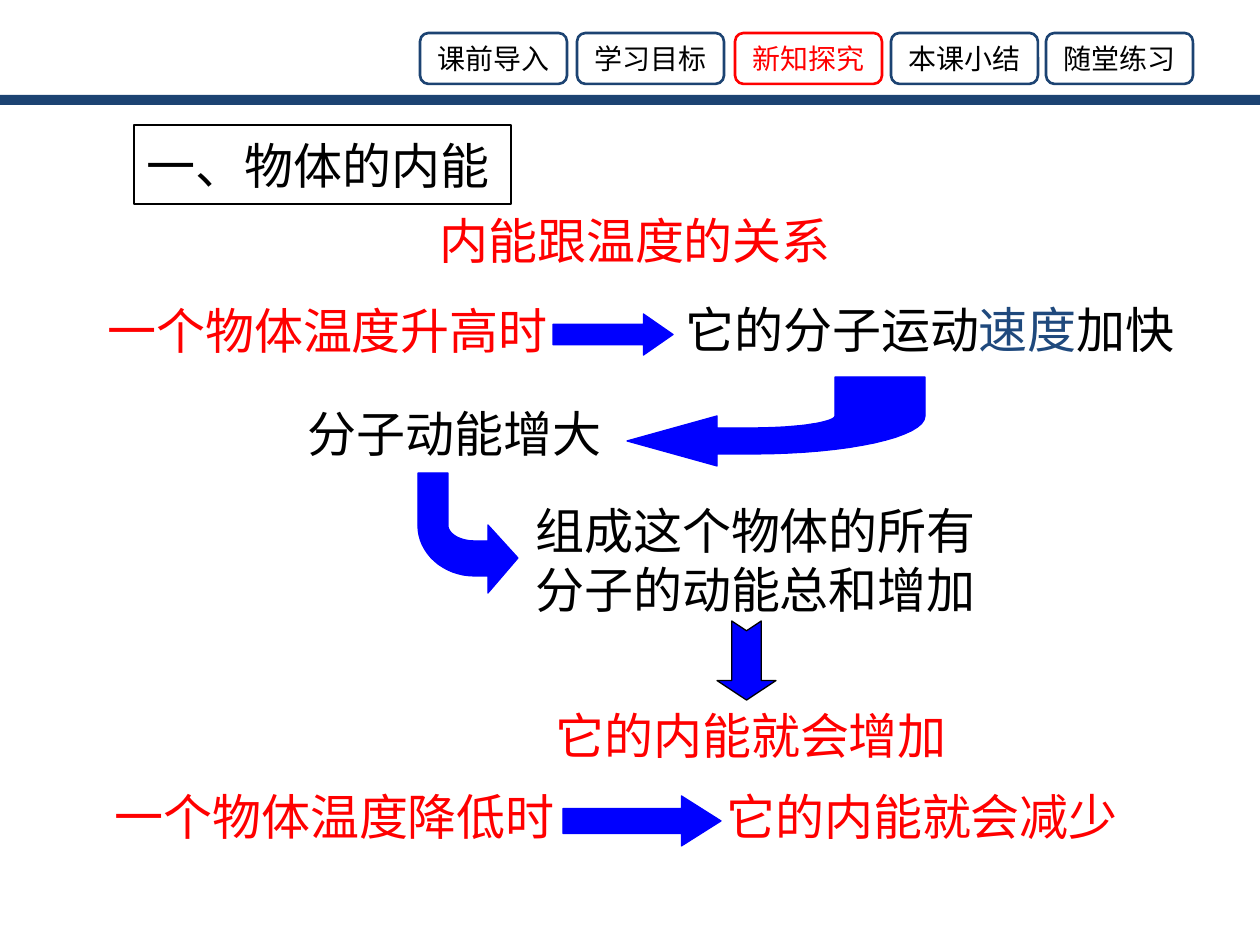
from dataclasses import dataclass

from lxml.etree import SubElement
from pptx import Presentation
from pptx.dml.color import RGBColor
from pptx.enum.shapes import MSO_SHAPE
from pptx.enum.text import MSO_ANCHOR, MSO_AUTO_SIZE, PP_ALIGN
from pptx.oxml import parse_xml
from pptx.oxml.ns import nsdecls, qn
from pptx.util import Inches, Pt

PX = 914400 / 126
FINE = 10  # freeform units per px


@dataclass(frozen=True)
class Theme:
    navy: str = "1C4372"
    accent: str = "1F497D"
    red: str = "FF0000"
    black: str = "000000"
    blue: str = "0000FF"
    font: str = "Noto Sans CJK SC"
    title_font: str = "Times New Roman"
    tab_size: int = 16
    text_size: int = 28
    frame_line: float = 1.5
    arrow_line: float = 0.75


T = Theme()

TITLE = ("一、物体的内能", (134, 125, 377, 79))
BAR = (0, 95, 1260, 10)
TAB_TOP, TAB_WIDTH, TAB_HEIGHT = 33, 147, 51
TABS = [("课前导入", 420), ("学习目标", 577), ("新知探究", 735),
        ("本课小结", 891), ("随堂练习", 1046)]
ACTIVE_TAB = "新知探究"

# box, then runs of (text, colour)
STATEMENTS = [
    ((427, 204, 427, 72), [("内能跟温度的关系", T.red)]),
    ((95, 294, 528, 72), [("一个物体温度升高时", T.red)]),
    ((295, 397, 345, 72), [("分子动能增大", T.black)]),
    ((673, 293, 563, 72),
     [("它的分子运动", T.black), ("速度", T.accent), ("加快", T.black)]),
    ((523, 494, 507, 131), [("组成这个物体的所有分子的动能总和增加", T.black)]),
    ((543, 699, 486, 72), [("它的内能就会增加", T.red)]),
    ((102, 780, 538, 72), [("一个物体温度降低时", T.red)]),
    ((714, 780, 460, 72), [("它的内能就会减少", T.red)]),
]
LINE_PITCH = 33.6

# preset, box, head length ratio, rotation, line colour
STRAIGHT_ARROWS = [
    (MSO_SHAPE.RIGHT_ARROW, (563, 796, 158, 50), 0.79, 0, T.blue),
    (MSO_SHAPE.RIGHT_ARROW, (553, 314, 120, 41), 0.72, 0, T.blue),
    (MSO_SHAPE.NOTCHED_RIGHT_ARROW, (707, 631, 79, 59), 0.33, 90, T.black),
]

# a step is a point, or a triple of Bezier points
CURVED_ARROWS = [
    [(518, 558), (488, 593), (488, 576), (475, 576),
     ((443, 576), (418, 553), (418, 525)),
     (418, 473), (448, 473), (448, 525),
     ((448, 534), (460, 541), (475, 541)), (488, 541), (488, 525)],
    [(627, 441), (717, 466), (717, 454), (753, 454),
     ((848, 454), (925, 437), (925, 416)),
     (925, 377), (835, 377), (835, 416),
     ((835, 422), (799, 428), (753, 428)), (717, 428), (717, 416)],
]


def emu(box):
    return [round(v * PX) for v in box]


def paint(shape, fill=None, line=None, width=0):
    shape.shadow.inherit = False
    if fill:
        shape.fill.solid()
        shape.fill.fore_color.rgb = RGBColor.from_string(fill)
    else:
        shape.fill.background()
    if line:
        shape.line.color.rgb = RGBColor.from_string(line)
        shape.line.width = Pt(width)
    else:
        shape.line.fill.background()


def write(shape, runs, size, align=PP_ALIGN.LEFT, font=T.font):
    frame = shape.text_frame
    frame.word_wrap = True
    frame.auto_size = MSO_AUTO_SIZE.NONE
    frame.vertical_anchor = MSO_ANCHOR.MIDDLE
    frame.margin_left = frame.margin_right = Inches(0.1)
    frame.margin_top = frame.margin_bottom = 0
    paragraph = frame.paragraphs[0]
    paragraph.alignment = align
    for text, colour in runs:
        run = paragraph.add_run()
        run.text = text
        run.font.size = Pt(size)
        run.font.name = font
        run.font.color.rgb = RGBColor.from_string(colour)
        SubElement(run.font._element, qn("a:ea")).set("typeface", T.font)
    return paragraph


def bezier(start, first, second, end, steps=16):
    for i in range(1, steps + 1):
        t = i / steps
        yield tuple((1 - t) ** 3 * a + 3 * t * (1 - t) ** 2 * b
                    + 3 * t * t * (1 - t) * c + t ** 3 * d
                    for a, b, c, d in zip(start, first, second, end))


def outline(steps):
    points = [steps[0]]
    for step in steps[1:]:
        if isinstance(step[0], tuple):
            points.extend(bezier(points[-1], *step))
        else:
            points.append(step)
    return [(round(x * FINE), round(y * FINE)) for x, y in points]


def add_title(slide):
    text, box = TITLE
    title = slide.shapes.title
    title.left, title.top, title.width, title.height = emu(box)
    title._element.spPr.append(parse_xml(
        f'<a:prstGeom {nsdecls("a")} prst="roundRect"><a:avLst/></a:prstGeom>'))
    paint(title, line=T.black, width=T.frame_line)
    write(title, [(text, T.black)], T.text_size, font=T.title_font)


def add_tabs(shapes):
    paint(shapes.add_shape(MSO_SHAPE.RECTANGLE, *emu(BAR)), fill=T.navy)
    for label, left in TABS:
        active = label == ACTIVE_TAB
        tab = shapes.add_shape(MSO_SHAPE.ROUNDED_RECTANGLE,
                               *emu((left, TAB_TOP, TAB_WIDTH, TAB_HEIGHT)))
        paint(tab, line=T.red if active else T.navy, width=T.frame_line)
        write(tab, [(label, T.red if active else T.black)], T.tab_size,
              PP_ALIGN.CENTER)


def add_arrows(shapes):
    for preset, box, head, rotation, line in STRAIGHT_ARROWS:
        arrow = shapes.add_shape(preset, *emu(box))
        arrow.adjustments[1] = head
        arrow.rotation = rotation
        paint(arrow, T.blue, line, T.arrow_line)
    for steps in CURVED_ARROWS:
        start, *rest = outline(steps)
        builder = shapes.build_freeform(*start, scale=PX / FINE)
        builder.add_line_segments(rest, close=True)
        paint(builder.convert_to_shape(), T.blue, T.blue, T.arrow_line)


def main():
    deck = Presentation()
    deck.slide_width, deck.slide_height = Inches(10), Inches(7.5)
    slide = deck.slides.add_slide(deck.slide_layouts[5])
    add_title(slide)
    add_tabs(slide.shapes)
    for box, runs in STATEMENTS:
        statement = slide.shapes.add_textbox(*emu(box))
        write(statement, runs, T.text_size).line_spacing = Pt(LINE_PITCH)
    add_arrows(slide.shapes)
    deck.save("out.pptx")


if __name__ == "__main__":
    main()
